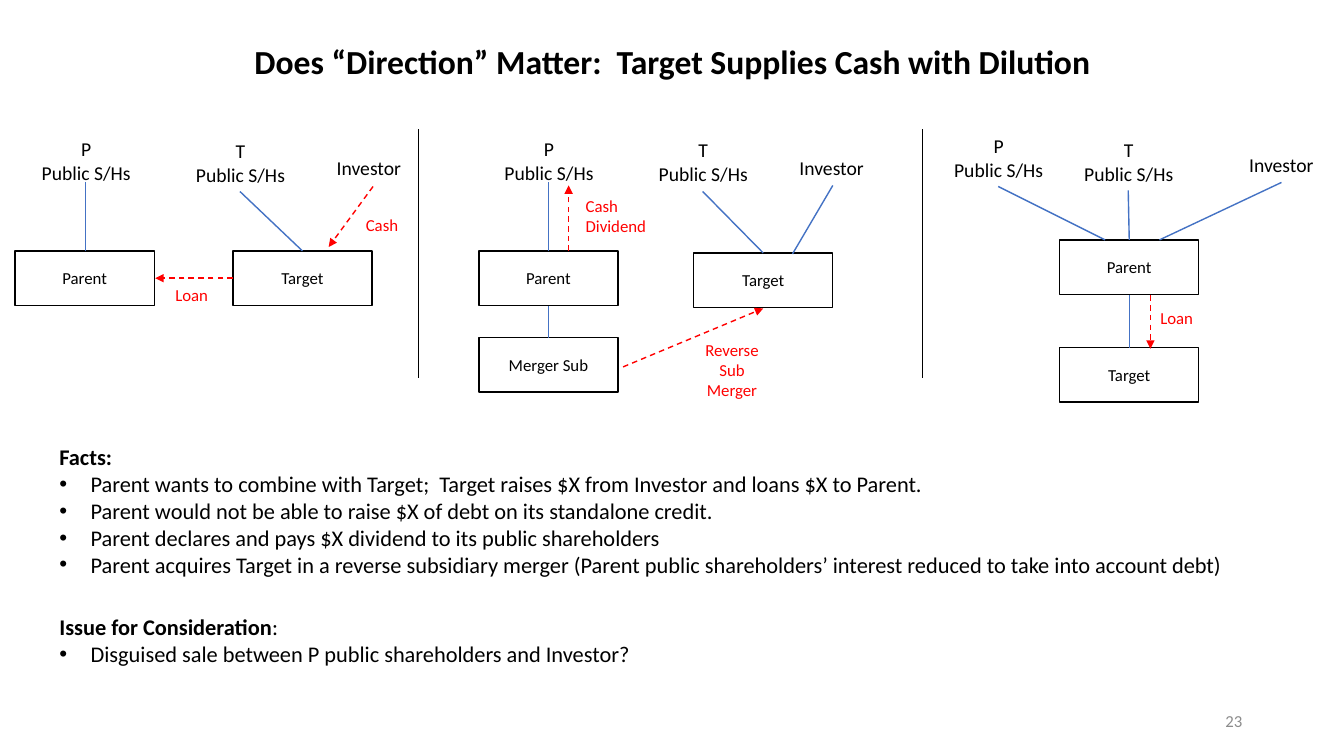
import pptx
import pptx.util
import pptx.dml.color
import pptx.enum.dml
import pptx.enum.shapes
import pptx.enum.text
from lxml import etree

Inches, Pt = pptx.util.Inches, pptx.util.Pt
ALIGN = pptx.enum.text.PP_ALIGN
ANCHOR = pptx.enum.text.MSO_ANCHOR
BLACK, BLUE, RED, GREY = "000000", "4472C4", "FF0000", "8C8C8C"
BOX_W, BOX_H = 1.38, 0.54
LABEL_W, LABEL_H = 0.82, 0.34

TITLE = "Does “Direction” Matter:  Target Supplies Cash with Dilution"
PAGE = "23"
FACTS = [
    "Parent wants to combine with Target;  Target raises $X from Investor and loans $X to Parent.",
    "Parent would not be able to raise $X of debt on its standalone credit.",
    "Parent declares and pays $X dividend to its public shareholders",
    "Parent acquires Target in a reverse subsidiary merger (Parent public shareholders’ interest"
    " reduced to take into account debt)",
]
ISSUES = ["Disguised sale between P public shareholders and Investor?"]

# holders: (name, left, top); boxes: (name, left, top)
# ties: (x1, y1, x2, y2); flows: the same, pointing at the second end
# labels: (lines, left, top, alignment)
STAGES = [
    {
        "holders": [("P", 0.31, 1.31), ("T", 1.84, 1.33), ("Investor", 3.24, 1.5)],
        "boxes": [("Parent", 0.15, 2.49), ("Target", 2.31, 2.49)],
        "ties": [(0.85, 2.49, 0.85, 1.81), (3, 2.49, 2.38, 1.9)],
        "flows": [(3.7, 1.85, 3.26, 2.45), (2.31, 2.76, 1.54, 2.76)],
        "labels": [(["Cash"], 3.53, 2.09, ALIGN.LEFT), (["Loan"], 1.64, 2.78, ALIGN.LEFT)],
    },
    {
        "holders": [("P", 4.9, 1.31), ("T", 6.43, 1.32), ("Investor", 7.83, 1.5)],
        "boxes": [("Parent", 4.75, 2.49), ("Target", 6.88, 2.51), ("Merger Sub", 4.75, 3.35)],
        "ties": [(5.44, 2.49, 5.44, 1.81), (7.57, 2.51, 6.97, 1.9),
                 (7.86, 2.52, 8.26, 1.84), (5.44, 3.35, 5.44, 3.04)],
        "flows": [(5.64, 2.49, 5.64, 1.84), (6.18, 3.64, 7.57, 3.06)],
        "labels": [(["Cash", "Dividend"], 5.71, 1.9, ALIGN.LEFT),
                   (["Reverse Sub", "Merger"], 6.85, 3.33, ALIGN.CENTER)],
    },
    {
        "holders": [("P", 9.36, 1.28), ("T", 10.65, 1.32), ("Investor", 12.29, 1.47)],
        "boxes": [("Parent", 10.51, 2.38), ("Target", 10.51, 3.45)],
        "ties": [(11.2, 2.93, 11.2, 3.45), (9.9, 1.85, 10.96, 2.38),
                 (11.2, 2.38, 11.19, 1.89), (11.5, 2.38, 12.71, 1.81)],
        "flows": [(11.41, 2.93, 11.41, 3.46)],
        "labels": [(["Loan"], 11.41, 3.01, ALIGN.LEFT)],
    },
]
DIVIDERS = [(x, 1.28, x, 3.75) for x in (4.15, 9.15)]


def rgb(value):
    return pptx.dml.color.RGBColor.from_string(value)


def add_run(p, text, size, color=BLACK, bold=False):
    r = p.add_run()
    r.text = text
    fmt = {"name": "Calibri", "size": Pt(size), "bold": bold}
    for name, value in fmt.items():
        setattr(r.font, name, value)
    r.font.color.rgb = rgb(color)


def fill_text(tf, lines, size, color=BLACK, bold=False, frame=None, para=None):
    """Write one paragraph per line; frame and para hold format values."""
    for name, value in (frame or {}).items():
        setattr(tf, name, value)
    for i, line in enumerate(lines):
        p = tf.add_paragraph() if i else tf.paragraphs[0]
        for name, value in (para or {}).items():
            setattr(p, name, value)
        add_run(p, line, size, color, bold)


def add_text(s, at, lines, size, **fmt):
    sp = s.shapes.add_textbox(*map(Inches, at))
    sp.text_frame.word_wrap = True
    fill_text(sp.text_frame, lines, size, **fmt)
    return sp.text_frame


def add_line(s, ends, color, arrow=False):
    c = s.shapes.add_connector(pptx.enum.shapes.MSO_CONNECTOR.STRAIGHT, *map(Inches, ends))
    c.line.color.rgb = rgb(color)
    c.line.width = Pt(1)
    if arrow:
        c.line.dash_style = pptx.enum.dml.MSO_LINE.DASH
        tail = etree.SubElement(c.line._get_or_add_ln(), pptx.oxml.ns.qn("a:tailEnd"))
        tail.set("type", "triangle")
    etree.SubElement(c._element.spPr, pptx.oxml.ns.qn("a:effectLst"))


def add_box(s, name, x, y):
    sp = s.shapes.add_shape(pptx.enum.shapes.MSO_SHAPE.RECTANGLE,
                            *map(Inches, (x, y, BOX_W, BOX_H)))
    sp.shadow.inherit = False
    sp.fill.background()
    sp.line.color.rgb = rgb(BLACK)
    sp.line.width = Pt(1)
    frame = {f"margin_{side}": 0 for side in ("left", "top", "right", "bottom")}
    frame.update(word_wrap=False, vertical_anchor=ANCHOR.MIDDLE)
    fill_text(sp.text_frame, [name], 12, frame=frame, para={"alignment": ALIGN.CENTER})


def add_holder(s, name, x, y):
    grow = {"word_wrap": False, "auto_size": pptx.enum.text.MSO_AUTO_SIZE.SHAPE_TO_FIT_TEXT}
    if name == "Investor":
        add_text(s, (x, y, 0.85, 0.34), [name], 14, frame=grow)
    else:
        add_text(s, (x, y, 1.09, 0.57), [name, "Public S/Hs"], 14, frame=grow,
                 para={"alignment": ALIGN.CENTER})


def add_bullets(tf, items):
    for item in items:
        p = tf.add_paragraph()
        pPr = p._p.get_or_add_pPr()
        pPr.set("marL", str(Inches(0.31)))
        pPr.set("indent", str(-Inches(0.31)))
        font = etree.SubElement(pPr, pptx.oxml.ns.qn("a:buFont"))
        font.set("typeface", "Arial")
        etree.SubElement(pPr, pptx.oxml.ns.qn("a:buChar")).set("char", "•")
        add_run(p, item, 16)


def main():
    prs = pptx.Presentation()
    prs.slide_width, prs.slide_height = Inches(13.33), Inches(7.5)
    s = prs.slides.add_slide(prs.slide_layouts[6])

    add_text(s, (0.92, 0.36, 11.5, 0.9), [TITLE], 24, bold=True,
             para={"alignment": ALIGN.CENTER})

    for stage in STAGES:
        for box in stage["boxes"]:
            add_box(s, *box)
        for holder in stage["holders"]:
            add_holder(s, *holder)
        for tie in stage["ties"]:
            add_line(s, tie, BLUE)
        for flow in stage["flows"]:
            add_line(s, flow, RED, arrow=True)
        for lines, x, y, align in stage["labels"]:
            add_text(s, (x, y, LABEL_W, LABEL_H), lines, 12, color=RED,
                     para={"alignment": align, "line_spacing": Pt(14)})
    for divider in DIVIDERS:
        add_line(s, divider, BLACK)

    tf = add_text(s, (0.49, 4.35, 12.35, 2.34), ["Facts:"], 16, bold=True)
    add_bullets(tf, FACTS)
    p = tf.add_paragraph()
    p.space_before = Pt(25.5)
    add_run(p, "Issue for Consideration", 16, bold=True)
    add_run(p, ":", 16)
    add_bullets(tf, ISSUES)

    add_text(s, (9.42, 6.95, 3, 0.4), [PAGE], 12, color=GREY,
             frame={"vertical_anchor": ANCHOR.MIDDLE}, para={"alignment": ALIGN.RIGHT})
    prs.save("out.pptx")


if __name__ == "__main__":
    main()
